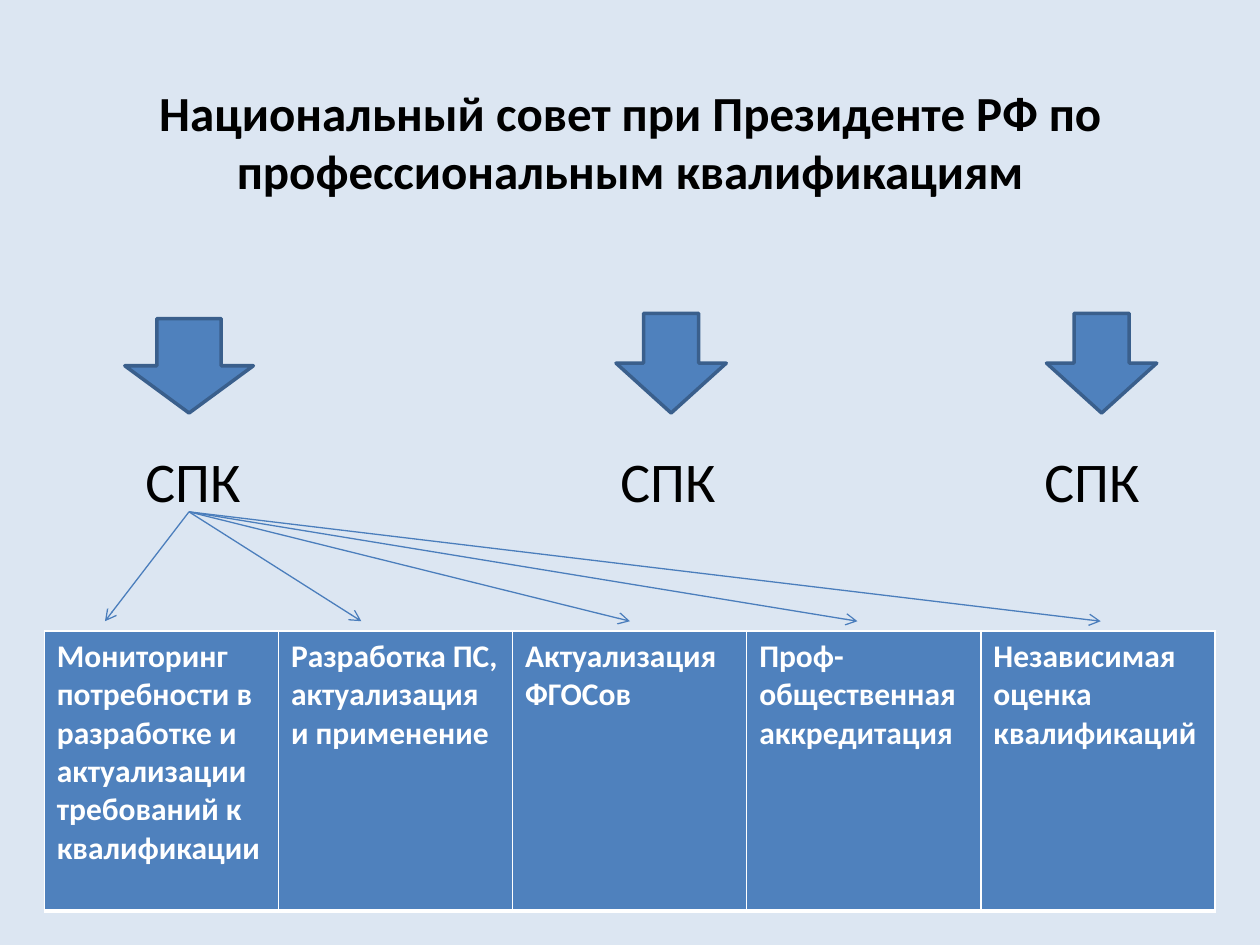
from lxml import etree
from pptx import Presentation
from pptx.dml.color import RGBColor
from pptx.enum.shapes import MSO_CONNECTOR, MSO_SHAPE
from pptx.enum.text import MSO_ANCHOR, MSO_AUTO_SIZE, PP_ALIGN
from pptx.oxml.ns import qn
from pptx.util import Pt

DOWN_ARROW = MSO_SHAPE.DOWN_ARROW
STRAIGHT = MSO_CONNECTOR.STRAIGHT
MIDDLE = MSO_ANCHOR.MIDDLE
CENTER = PP_ALIGN.CENTER
NO_FIT = MSO_AUTO_SIZE.NONE

FONT = "Calibri"
COLORS = {
    "background": "DCE6F2",
    "text": "000000",
    "white": "FFFFFF",
    "blue": "4F81BD",
    "outline": "3A5F8C",
    "connector": "4B7EBC",
}


def color(name):
    return RGBColor.from_string(COLORS[name])


def child(parent, tag, **attrs):
    return etree.SubElement(parent, qn(tag), attrs)


class SlideBuilder:
    def __init__(self, prs):
        self.s = prs.slides.add_slide(prs.slide_layouts[1])
        fill = self.s.background.fill
        fill.solid()
        fill.fore_color.rgb = color("background")

    def style(self, p, size, name="text", bold=False):
        for r in p.runs:
            r.font.name = FONT
            r.font.size = Pt(size)
            r.font.bold = bold
            r.font.color.rgb = color(name)

    def place(self, sp, box, text, size, bold=False):
        sp.left, sp.top, sp.width, sp.height = map(Pt, box)
        tf = sp.text_frame
        tf.text = text
        tf.word_wrap = True
        tf.auto_size = NO_FIT
        tf.vertical_anchor = MIDDLE
        p = tf.paragraphs[0]
        p.alignment = CENTER
        p.space_before = Pt(0)
        self.style(p, size, bold=bold)
        return p

    def title(self, text, box):
        self.place(self.s.shapes.title, box, text, 28, bold=True)

    def councils(self, text, centers, top, width, height):
        boxes = [(x - width / 2, top, width, height) for x in centers]
        p = self.place(self.s.placeholders[1], boxes[0], text, 32)
        pPr = p._p.get_or_add_pPr()
        pPr.set("marL", "0")
        pPr.set("indent", "0")
        child(pPr, "a:buNone")
        for box in boxes[1:]:
            self.place(self.s.shapes.add_textbox(*map(Pt, box)), box, text, 32)

    def arrow(self, box):
        sp = self.s.shapes.add_shape(DOWN_ARROW, *map(Pt, box))
        sp.shadow.inherit = False
        sp.fill.solid()
        sp.fill.fore_color.rgb = color("blue")
        sp.line.color.rgb = color("outline")
        sp.line.width = Pt(2)

    def border(self, cell, side, width):
        tcPr = cell._tc.get_or_add_tcPr()
        ln = child(tcPr, "a:ln" + side, w=str(Pt(width)))
        child(child(ln, "a:solidFill"), "a:srgbClr", val=COLORS["white"])

    def table(self, texts, box):
        table = self.s.shapes.add_table(1, len(texts), *map(Pt, box)).table
        for column, cell, text in zip(table.columns, table.rows[0].cells, texts):
            column.width = Pt(box[2] / len(texts))
            for side, width in (("L", 1), ("R", 1), ("T", 1), ("B", 3)):
                self.border(cell, side, width)
            cell.fill.solid()
            cell.fill.fore_color.rgb = color("blue")
            cell.text_frame.text = text
            self.style(cell.text_frame.paragraphs[0], 18, "white", bold=True)

    def connector(self, start, end):
        line = self.s.shapes.add_connector(STRAIGHT, *map(Pt, start + end))
        line.line.color.rgb = color("connector")
        line.line.width = Pt(0.75)
        child(line.line._get_or_add_ln(), "a:tailEnd", type="arrow")
        child(line._element.spPr, "a:effectLst")


def main():
    prs = Presentation()
    prs.slide_width, prs.slide_height = Pt(720), Pt(540)
    slide = SlideBuilder(prs)

    slide.title(
        "Национальный совет при Президенте РФ по профессиональным квалификациям",
        (36.5, 21.5, 647, 118),
    )
    slide.councils("СПК", (110.3, 381.7, 624), top=251.5, width=100, height=46)

    slide.arrow((71.3, 182, 73.5, 54))
    for left in (352, 598):
        slide.arrow((left, 179, 63, 57))

    slide.table(
        [
            "Мониторинг потребности в разработке и актуализации требований к квалификации",
            "Разработка ПС, актуализация и применение",
            "Актуализация ФГОСов",
            "Проф-общественная аккредитация",
            "Независимая оценка квалификаций",
        ],
        (25.3, 360.5, 669, 160),
    )
    for x in (60, 206.5, 360, 490, 629):
        slide.connector((108, 292.5), (x, 355))

    prs.save("out.pptx")


if __name__ == "__main__":
    main()
